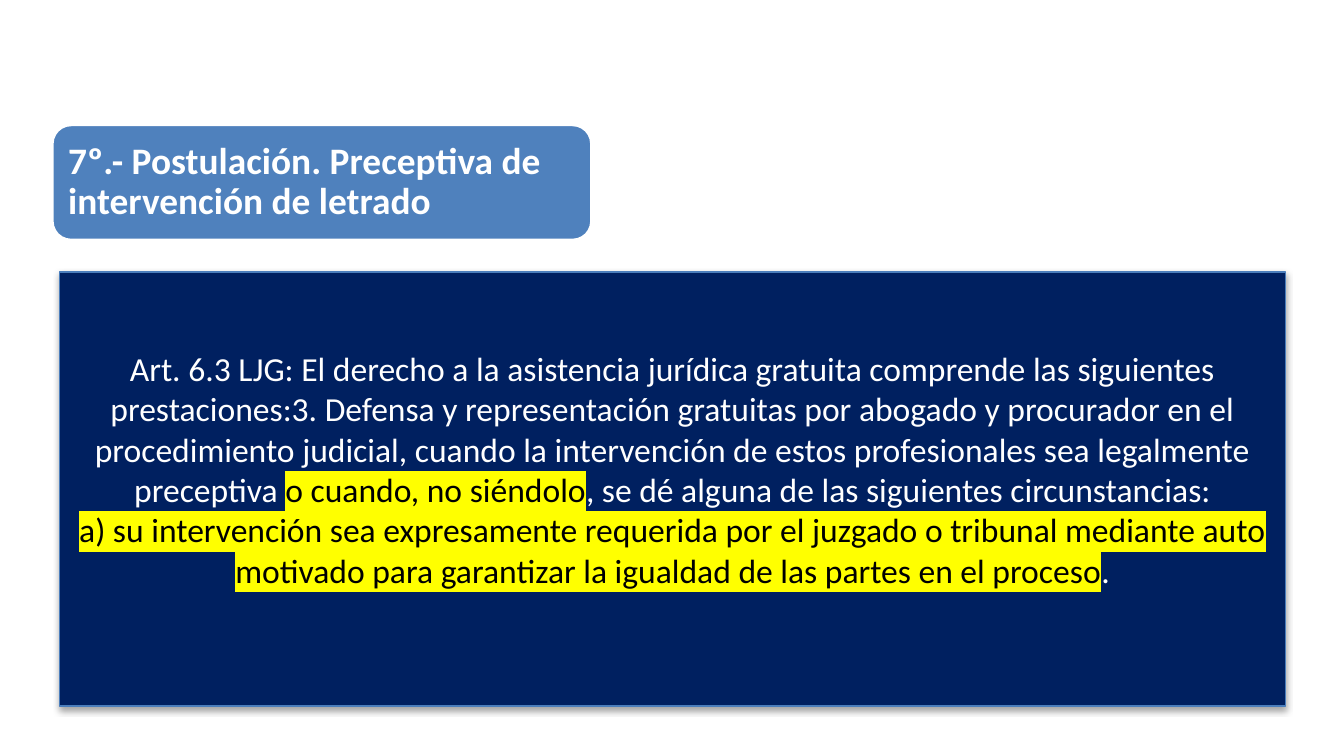
from dataclasses import dataclass

from lxml import etree
from pptx import Presentation
from pptx.dml.color import RGBColor
from pptx.enum import shapes, text
from pptx.oxml import ns
from pptx.util import Emu, Pt

SCALE = 4572


@dataclass(frozen=True)
class Theme:
    font: str = "Calibri"
    white: str = "FFFFFF"
    black: str = "000000"
    blue: str = "4F81BD"
    edge: str = "4B7EBC"
    navy: str = "002060"
    mark: str = "FFFF00"
    head: int = 20
    body: int = 18


THEME = Theme()


def px(n):
    return Emu(n * SCALE)


def rgb(code):
    return RGBColor.from_string(code)


def add_box(slide, kind, rect, fill, line, width, pads):
    box = slide.shapes.add_shape(kind, *map(px, rect))
    box.shadow.inherit = False
    box.fill.solid()
    box.fill.fore_color.rgb = rgb(fill)
    box.line.color.rgb = rgb(line)
    box.line.width = Pt(width)
    frame = box.text_frame
    frame.word_wrap = True
    frame.vertical_anchor = text.MSO_ANCHOR.MIDDLE
    frame.margin_left, frame.margin_top, frame.margin_right, frame.margin_bottom = map(px, pads)
    return box


def add_shade(box, color):
    glow = etree.SubElement(
        box._element.spPr.find(ns.qn("a:effectLst")), ns.qn("a:outerShdw"),
        blurRad="40000", dist="23000", dir="5400000", rotWithShape="0")
    tint = etree.SubElement(glow, ns.qn("a:srgbClr"), val=color)
    etree.SubElement(tint, ns.qn("a:alpha"), val="35000")


def add_run(para, words, size, color=THEME.white, bold=False, mark=None):
    run = para.add_run()
    run.text = words
    font = run.font
    font.name, font.size, font.bold = THEME.font, Pt(size), bold
    font.color.rgb = rgb(color)
    if mark:
        light = etree.Element(ns.qn("a:highlight"))
        etree.SubElement(light, ns.qn("a:srgbClr"), val=mark)
        run._r.rPr.find(ns.qn("a:solidFill")).addnext(light)


def add_title(slide):
    box = add_box(slide, shapes.MSO_SHAPE.ROUNDED_RECTANGLE, (77, 185, 804, 173),
                  THEME.blue, THEME.white, 2, (16, 16, 16, 16))
    para = box.text_frame.paragraphs[0]
    para.alignment = text.PP_ALIGN.LEFT
    para.line_spacing = 0.9
    add_run(para, "7º.- Postulación. Preceptiva de intervención de letrado",
            THEME.head, bold=True)


def add_panel(slide, paras):
    box = add_box(slide, shapes.MSO_SHAPE.RECTANGLE, (89, 405, 1824, 646),
                  THEME.navy, THEME.edge, 0.75, (20, 10, 20, 70))
    add_shade(box, THEME.black)
    frame = box.text_frame
    for i, parts in enumerate(paras):
        para = frame.add_paragraph() if i else frame.paragraphs[0]
        para.alignment = text.PP_ALIGN.CENTER
        for words, lit in parts:
            look = {"color": THEME.black, "mark": THEME.mark} if lit else {}
            add_run(para, words, THEME.body, **look)


def main():
    deck = Presentation()
    deck.slide_width, deck.slide_height = px(2000), px(1125)
    slide = deck.slides.add_slide(deck.slide_layouts[6])
    add_title(slide)
    add_panel(slide, [
        [("Art. 6.3 LJG: El derecho a la asistencia jurídica gratuita comprende las "
          "siguientes prestaciones:3. Defensa y representación gratuitas por abogado y "
          "procurador en el procedimiento judicial, cuando la intervención de estos "
          "profesionales sea legalmente preceptiva ", False),
         ("o cuando, no siéndolo", True),
         (", se dé alguna de las siguientes circunstancias:", False)],
        [("a) su intervención sea expresamente requerida por el juzgado o tribunal "
          "mediante auto motivado para garantizar la igualdad de las partes en el "
          "proceso", True),
         (".", False)],
    ])
    deck.save("out.pptx")


if __name__ == "__main__":
    main()
